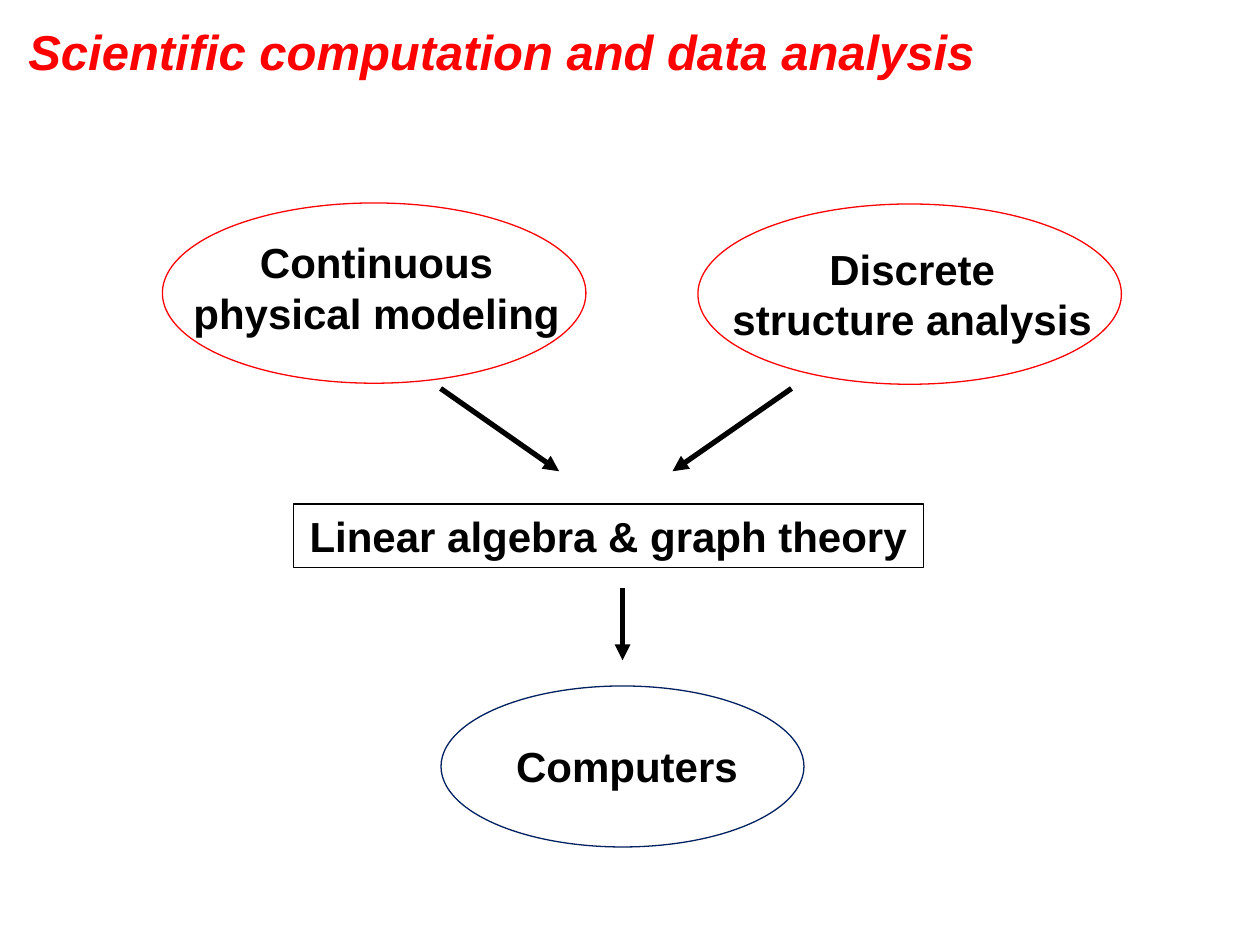
from lxml import etree
from pptx import Presentation
from pptx.dml.color import RGBColor
from pptx.enum.shapes import MSO_CONNECTOR, MSO_SHAPE
from pptx.enum.text import MSO_ANCHOR, MSO_AUTO_SIZE, PP_ALIGN
from pptx.oxml.ns import qn
from pptx.util import Pt

ELLIPSE, RECTANGLE = MSO_SHAPE.OVAL, MSO_SHAPE.RECTANGLE
STRAIGHT = MSO_CONNECTOR.STRAIGHT
MIDDLE = MSO_ANCHOR.MIDDLE
NO_AUTOSIZE, GROW = MSO_AUTO_SIZE.NONE, MSO_AUTO_SIZE.SHAPE_TO_FIT_TEXT
LEFT, CENTER = PP_ALIGN.LEFT, PP_ALIGN.CENTER

RED = RGBColor(0xFF, 0x00, 0x00)
NAVY = RGBColor(0x00, 0x20, 0x60)
BLACK = RGBColor(0x00, 0x00, 0x00)

TITLE_ONLY = 5
TITLE_FONT = {"name": "Arial", "size": Pt(28), "bold": True, "italic": True}
LABEL_FONT = {"name": "Arial", "size": Pt(24), "bold": True}
TITLE_FRAME = {"word_wrap": True, "auto_size": NO_AUTOSIZE, "vertical_anchor": MIDDLE}
LABEL_FRAME = {"word_wrap": False, "auto_size": GROW}


def in_points(values):
    return [Pt(value) for value in values]


def set_attributes(target, values):
    for name, value in values.items():
        setattr(target, name, value)


def write_text(shape, text, frame_format, font_format, color, alignment):
    """Fill a shape with one paragraph; a vertical tab is a line break."""
    frame = shape.text_frame
    frame.text = text
    set_attributes(frame, frame_format)
    paragraph = frame.paragraphs[0]
    paragraph.alignment = alignment
    for run in paragraph.runs:
        set_attributes(run.font, font_format)
        run.font.color.rgb = color


def add_title(slide, box, text):
    title = slide.shapes.title
    set_attributes(title, dict(zip(("left", "top", "width", "height"), in_points(box))))
    write_text(title, text, TITLE_FRAME, TITLE_FONT, RED, LEFT)


def add_outline(slide, kind, box, color):
    shape = slide.shapes.add_shape(kind, *in_points(box))
    shape.shadow.inherit = False
    shape.fill.background()
    shape.line.color.rgb = color
    shape.line.width = Pt(0.75)
    return shape


def add_ellipse_node(slide, box, color, text, label_box):
    """Place an ellipse and its label, given relative to the ellipse."""
    add_outline(slide, ELLIPSE, box, color)
    left, top, width, height = label_box
    label = slide.shapes.add_textbox(
        *in_points((box[0] + left, box[1] + top, width, height)))
    write_text(label, text, LABEL_FRAME, LABEL_FONT, BLACK, CENTER)


def add_box_node(slide, box, text):
    shape = add_outline(slide, RECTANGLE, box, BLACK)
    write_text(shape, text, LABEL_FRAME, LABEL_FONT, BLACK, CENTER)


def add_arrow(slide, start, end):
    arrow = slide.shapes.add_connector(STRAIGHT, *in_points(start + end))
    arrow.line.color.rgb = BLACK
    arrow.line.width = Pt(3)
    # Arrowhead at the end, and no theme shadow
    etree.SubElement(arrow.line._get_or_add_ln(), qn("a:tailEnd"), type="triangle")
    etree.SubElement(arrow._element.spPr, qn("a:effectLst"))


def add_diagram(slide, left, top):
    """Place the flow diagram with its top left corner at the given point."""
    # Two sources
    add_ellipse_node(slide, (left, top, 242, 103), RED,
                     "Continuous\vphysical modeling", (9.4, 15.8, 226, 65.5))
    add_ellipse_node(slide, (left + 306, top + 0.6, 242, 103), RED,
                     "Discrete\vstructure analysis", (11.5, 18.8, 222, 65.5))
    # Shared theory
    add_box_node(slide, (left + 74.8, top + 172, 360, 36.4),
                 "Linear algebra & graph theory")
    # Result
    add_ellipse_node(slide, (left + 159.2, top + 276, 207.4, 92), NAVY,
                     "Computers", (35, 27.5, 142.5, 36))
    # Arrows from the sources to the theory, and on to the result
    middle = left + 263
    arrow_top, arrow_bottom = top + 106, top + 153.3
    for start, end in ((-104, -36.3), (96.5, 28.5)):
        add_arrow(slide, (middle + start, arrow_top), (middle + end, arrow_bottom))
    add_arrow(slide, (middle, top + 220), (middle, top + 261.3))


def main():
    presentation = Presentation()
    presentation.slide_width, presentation.slide_height = Pt(720), Pt(540)
    slide = presentation.slides.add_slide(presentation.slide_layouts[TITLE_ONLY])
    add_title(slide, (9, 9, 639.4, 40), "Scientific computation and data analysis")
    add_diagram(slide, 92.8, 116)
    presentation.save("out.pptx")


if __name__ == "__main__":
    main()
